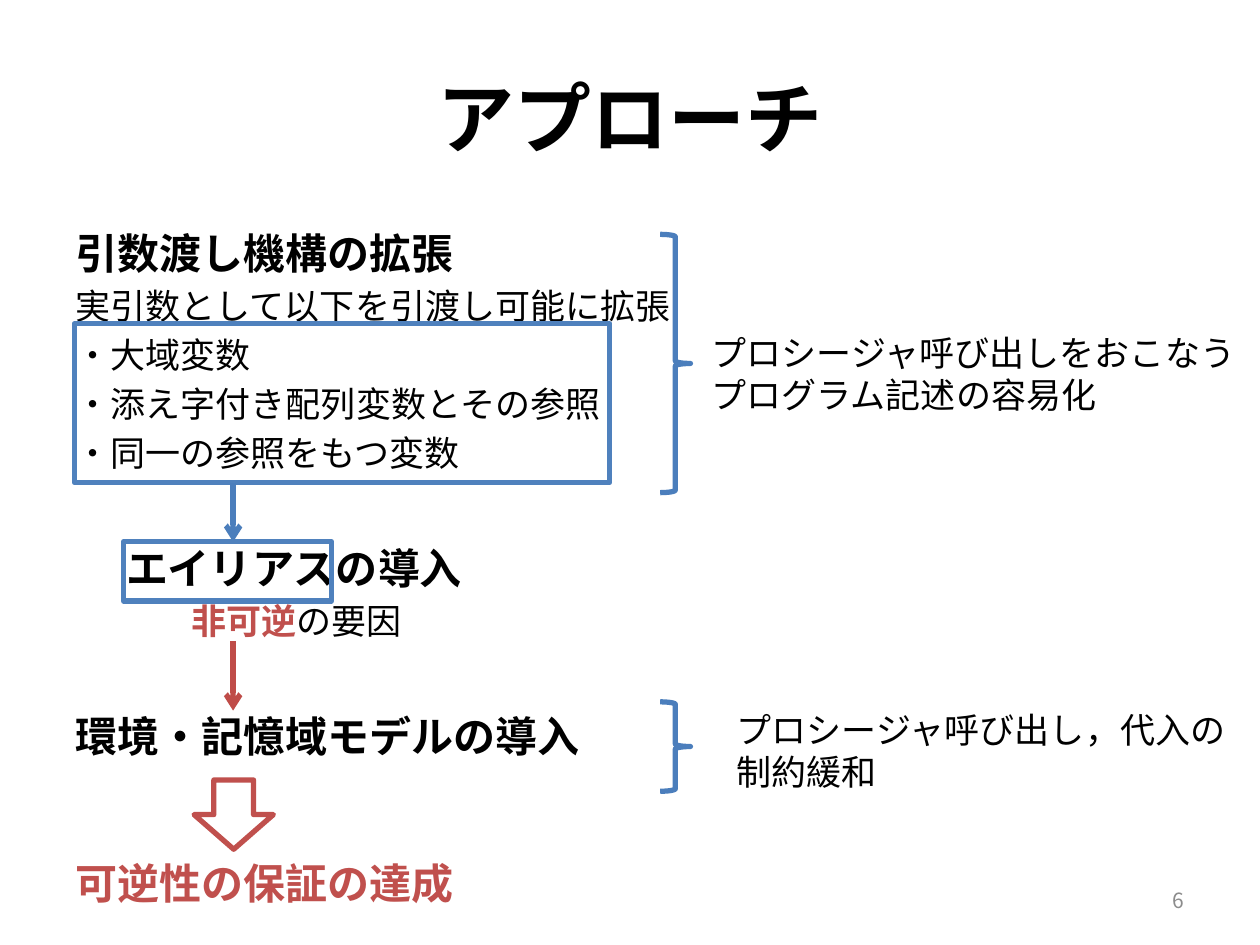
from lxml.etree import SubElement
from pptx import Presentation
from pptx.dml.color import RGBColor
from pptx.enum.shapes import MSO_CONNECTOR, MSO_SHAPE as SHAPE
from pptx.enum.text import MSO_ANCHOR as ANCHOR, MSO_AUTO_SIZE as AUTO, PP_ALIGN as ALIGN
from pptx.oxml.ns import qn
from pptx.util import Inches, Pt

FONT = "Noto Sans CJK JP"
BLACK, GREY, WHITE = "000000", "8C8C8C", "FFFFFF"
BLUE, BLUE_LINE = "4F81BD", "4B7EBC"
RED, RED_LINE = "C0504D", "BF4C48"
LINE_PITCH = 1.2
ARROW_X = 1.85
BRACE_X, BRACE_W = 5.24, 0.24


def rgb(color):
    return RGBColor.from_string(color)


def place(sp, left, top, width, height):
    sp.left, sp.top = Inches(left), Inches(top)
    sp.width, sp.height = Inches(width), Inches(height)


def add_run(p, text, size=20, color=BLACK, bold=False):
    r = p.add_run()
    r.text = text
    r.font.name, r.font.size, r.font.bold = FONT, Pt(size), bold
    r.font.color.rgb = rgb(color)
    SubElement(r.font._element, qn("a:ea"), typeface=FONT)


def add_line(tf, *runs, first=False, indent=0, before=0, size=20, align=ALIGN.LEFT):
    """Add one unbulleted paragraph; each run is (text, format dict)."""
    p = tf.paragraphs[0] if first else tf.add_paragraph()
    p.alignment = align
    p.line_spacing = Pt(round(size * LINE_PITCH))
    p.space_before = Pt(before)
    pPr = p._p.get_or_add_pPr()
    pPr.set("marL", str(Inches(indent)))
    pPr.set("indent", "0")
    SubElement(pPr, qn("a:buNone"))
    for text, style in runs:
        add_run(p, text, **{"size": size, **style})


def fill_title(sp, text):
    place(sp, 0.5, 0.3, 9, 1.25)
    tf = sp.text_frame
    tf.vertical_anchor = ANCHOR.MIDDLE
    p = tf.paragraphs[0]
    p.alignment = ALIGN.CENTER
    add_run(p, text, size=44, bold=True)


def fill_body(sp):
    place(sp, 0.5, 1.75, 9.85, 5.75)
    tf = sp.text_frame
    tf.word_wrap, tf.auto_size = True, AUTO.NONE
    bold = {"bold": True}
    red = {"bold": True, "color": RED}
    add_line(tf, ("引数渡し機構の拡張", bold), first=True, size=24)
    for text in ("実引数として以下を引渡し可能に拡張", "・大域変数",
                 "・添え字付き配列変数とその参照", "・同一の参照をもつ変数"):
        add_line(tf, (text, {}), before=4)
    add_line(tf, ("エイリアスの導入", bold), size=24, indent=0.4, before=39)
    add_line(tf, ("非可逆", red), ("の要因", {}), indent=0.92, before=4)
    add_line(tf, ("環境・記憶域モデルの導入", bold), size=24, before=39)
    add_line(tf, ("可逆性の保証の達成", red), size=24, before=55)


def add_text(slide, box, lines, anchor=ANCHOR.TOP, align=ALIGN.LEFT, **style):
    tf = slide.shapes.add_textbox(*map(Inches, box)).text_frame
    tf.word_wrap, tf.vertical_anchor = False, anchor
    for i, text in enumerate(lines):
        add_line(tf, (text, style), first=i == 0, align=align,
                 size=style.get("size", 20))


def add_outline(slide, kind, box, color, fill=None):
    sp = slide.shapes.add_shape(kind, *map(Inches, box))
    sp.shadow.inherit = False
    if fill:
        sp.fill.solid()
        sp.fill.fore_color.rgb = rgb(fill)
    else:
        sp.fill.background()
    sp.line.color.rgb = rgb(color)
    sp.line.width = Pt(3)


def add_down_line(slide, top, bottom, color):
    ends = map(Inches, (ARROW_X, top, ARROW_X, bottom))
    line = slide.shapes.add_connector(MSO_CONNECTOR.STRAIGHT, *ends)
    line.line.color.rgb = rgb(color)
    line.line.width = Pt(3)
    SubElement(line.line._get_or_add_ln(), qn("a:tailEnd"), type="arrow")
    SubElement(line._element.spPr, qn("a:effectLst"))


def main():
    prs = Presentation()
    prs.slide_width, prs.slide_height = Inches(10), Inches(7.5)
    slide = prs.slides.add_slide(prs.slide_layouts[1])
    title, body = slide.placeholders
    fill_title(title, "アプローチ")
    fill_body(body)
    add_text(slide, (7.17, 6.95, 2.33, 0.4), ["6"], anchor=ANCHOR.MIDDLE,
             align=ALIGN.RIGHT, size=12, color=GREY)

    add_outline(slide, SHAPE.RECTANGLE, (0.59, 2.57, 4.25, 1.26), BLUE)
    add_down_line(slide, 3.83, 4.3, BLUE_LINE)
    add_outline(slide, SHAPE.RECTANGLE, (0.98, 4.3, 1.65, 0.47), BLUE)
    add_down_line(slide, 5.09, 5.64, RED_LINE)
    add_outline(slide, SHAPE.DOWN_ARROW, (1.54, 6.19, 0.63, 0.55), RED, fill=WHITE)

    effects = (
        (1.86, 2.05, (5.55, 2.58, 4.41, 0.77),
         ["プロシージャ呼び出しをおこなう", "プログラム記述の容易化"]),
        (5.57, 0.71, (5.75, 5.57, 4.13, 0.77),
         ["プロシージャ呼び出し，代入の", "制約緩和"]),
    )
    for top, height, box, lines in effects:
        add_outline(slide, SHAPE.RIGHT_BRACE, (BRACE_X, top, BRACE_W, height), BLUE_LINE)
        add_text(slide, box, lines)
    prs.save("out.pptx")


if __name__ == "__main__":
    main()
